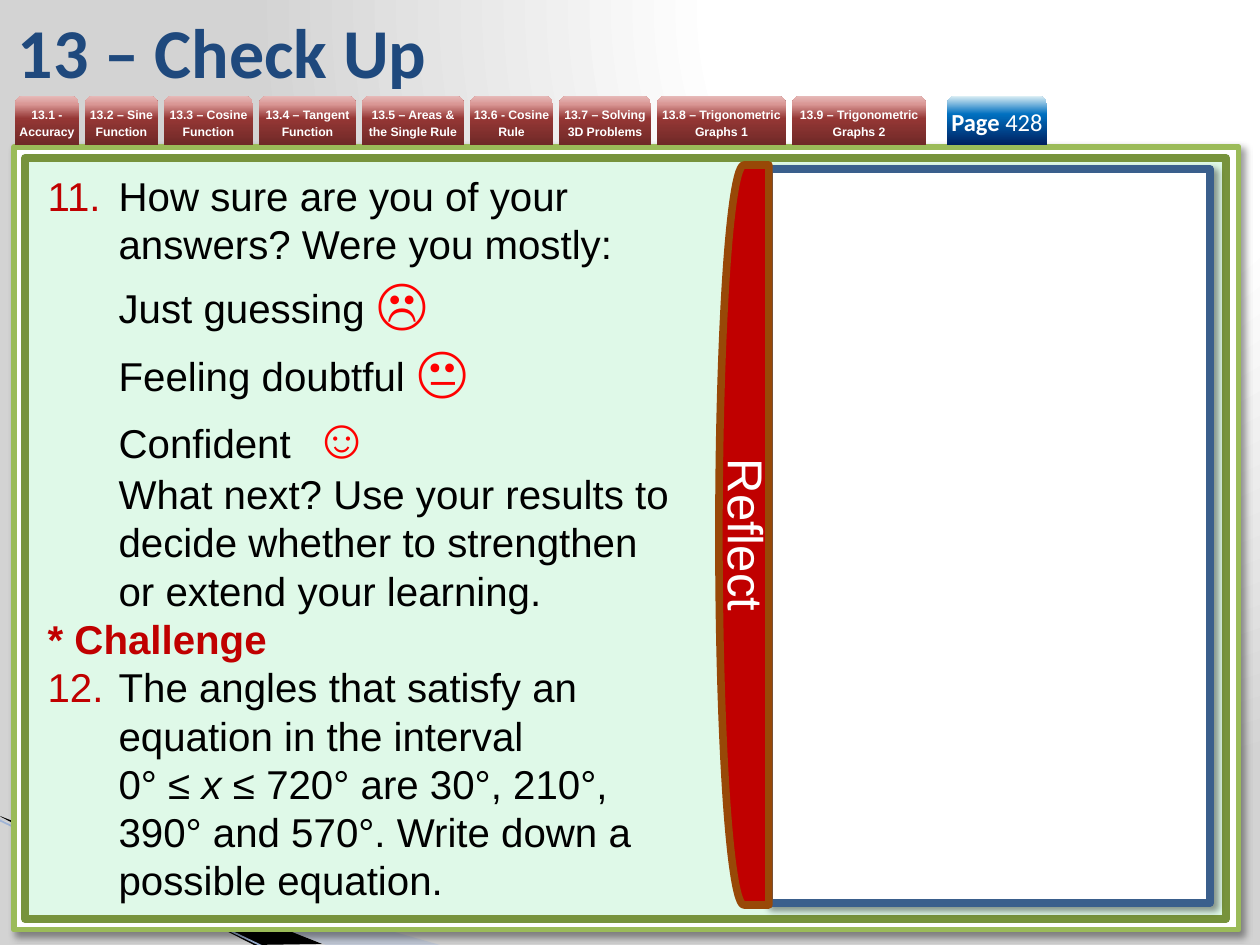
import pptx
import pptx.util
import pptx.oxml
import pptx.oxml.ns
import pptx.dml.color
import pptx.enum.shapes
import pptx.enum.text
from lxml import etree

SCALE = 914400 / 126  # EMU per px
COLORS = {
    "white": "FFFFFF", "black": "000000", "grey": "D3D3D3", "title": "1F497D",
    "red": "C00000", "face": "FF0000", "swoosh": "A7B9DB", "swoosh line": "9EB3D6",
    "frame": "9BBB59", "mint": "DFF9E8", "olive": "77933C", "blue": "3A5F8C",
    "brown": "984807",
}
TAB_STOPS = [(0, "6F2927"), (54, "953735"), (83, "D99694"), (100, "E6B9B8")]
PAGE_STOPS = [(0, "002060"), (63, "0070C0"), (100, "DBEEF4")]
BOTTOM_TO_TOP = '<a:lin ang="16200000" scaled="0"/>'
NS = pptx.oxml.ns.nsdecls("a")
qn = pptx.oxml.ns.qn
SHAPES = pptx.enum.shapes.MSO_SHAPE
CENTER = pptx.enum.text.PP_ALIGN.CENTER
MIDDLE = pptx.enum.text.MSO_ANCHOR.MIDDLE
Pt = pptx.util.Pt
rgb = pptx.dml.color.RGBColor.from_string


def px(*lengths):
    return [pptx.util.Emu(round(length * SCALE)) for length in lengths]


def set_gradient(fill, element, stops, direction):
    fill.gradient()
    old = element.find(".//" + qn("a:gradFill"))
    gs = "".join(f'<a:gs pos="{pos * 1000}"><a:srgbClr val="{color}"/></a:gs>'
                 for pos, color in stops)
    old.getparent().replace(old, pptx.oxml.parse_xml(
        f'<a:gradFill {NS} rotWithShape="1"><a:gsLst>{gs}</a:gsLst>{direction}</a:gradFill>'))


prs = pptx.Presentation()
prs.slide_width, prs.slide_height = px(1260, 945)
slide = prs.slides.add_slide(prs.slide_layouts[1])
shapes = slide.shapes

# Background
set_gradient(slide.background.fill, slide.element,
             [(0, COLORS["white"]), (40, COLORS["white"]), (100, COLORS["grey"])],
             '<a:path path="circle"><a:fillToRect l="65000" t="0" r="0" b="98000"/></a:path>')

# Swooshes in the bottom left corner
for color, alpha, (start, *rest) in [
    ("swoosh", 40, [(-1, 819), (440, 945), (326, 945), (-1, 818)]),
    ("black", 100, [(0, 816), (322, 944), (254, 945), (1, 817)]),
]:
    builder = shapes.build_freeform(*start, scale=SCALE)
    builder.add_line_segments(rest, close=True)
    swoosh = builder.convert_to_shape()
    swoosh.shadow.inherit = False
    swoosh.fill.solid()
    swoosh.fill.fore_color.rgb = rgb(COLORS[color])
    swoosh.line.fill.background()
    if alpha < 100:
        fill_color = swoosh.element.spPr.find(".//" + qn("a:srgbClr"))
        etree.SubElement(fill_color, qn("a:alpha")).set("val", str(alpha * 1000))

swoosh_edge = shapes.add_connector(
    pptx.enum.shapes.MSO_CONNECTOR.STRAIGHT, *px(-1, 820, 264, 947))
swoosh_edge.line.color.rgb = rgb(COLORS["swoosh line"])
swoosh_edge.line.width = Pt(0.95)
etree.SubElement(swoosh_edge.element.spPr, qn("a:effectLst"))

# Frame, question panel, answer panel and the Reflect band
for kind, box, fill, edge, width, shadowed in [
    (SHAPES.RECTANGLE, (14, 147, 1225, 783), "white", "frame", 3, True),
    (SHAPES.RECTANGLE, (25, 158, 1201, 761), "mint", "olive", 4.33, False),
    (SHAPES.RECTANGLE, (769, 169, 441, 734), "white", "blue", 4.33, True),
    (SHAPES.FLOWCHART_DELAY, (719, 165, 50, 740), "red", "brown", 4.33, False),
]:
    panel = shapes.add_shape(kind, *px(*box))
    panel.fill.solid()
    panel.fill.fore_color.rgb = rgb(COLORS[fill])
    panel.line.color.rgb = rgb(COLORS[edge])
    panel.line.width = Pt(width)
    panel.shadow.inherit = False
    if shadowed:
        panel.element.spPr.find(qn("a:effectLst")).append(pptx.oxml.parse_xml(
            f'<a:outerShdw {NS} blurRad="50800" dist="38100" dir="2700000" algn="tl" '
            'rotWithShape="0"><a:srgbClr val="000000"><a:alpha val="40000"/></a:srgbClr>'
            '</a:outerShdw>'))

reflect = panel
reflect.element.spPr.find(qn("a:xfrm")).set("flipH", "1")
reflect.text_frame.text = "Reflect"
reflect.text_frame.vertical_anchor = MIDDLE
reflect.text_frame._txBody.bodyPr.set("vert", "vert")
reflect_label = reflect.text_frame.paragraphs[0]
reflect_label.alignment = CENTER
reflect_label.runs[0].font.size = Pt(28)
reflect_label.runs[0].font.name = "Arial"
reflect_label.runs[0].font.color.rgb = rgb(COLORS["white"])

# Section tabs and page tab: left, width, runs
section_tabs = [
    (15, 64, ["13.1 - Accuracy"]),
    (85, 73, ["13.2 – Sine Function"]),
    (164, 89, ["13.3 – Cosine Function"]),
    (259, 97, ["13.4 – Tangent Function"]),
    (362, 102, ["13.5 – Areas & the Single Rule"]),
    (470, 83, ["13.6 - Cosine Rule"]),
    (559, 92, ["13.7 – Solving 3D Problems"]),
    (657, 129, ["13.8 – Trigonometric Graphs 1"]),
    (792, 134, ["13.9 – Trigonometric Graphs 2"]),
    (947, 100, ["Page ", "428"]),
]
for left, width, labels in section_tabs:
    is_page = len(labels) == 2
    tab = shapes.add_shape(SHAPES.ROUND_2_SAME_RECTANGLE, *px(left, 96, width, 49))
    tab.shadow.inherit = False
    tab.line.fill.background()
    set_gradient(tab.fill, tab.element.spPr, PAGE_STOPS if is_page else TAB_STOPS,
                 BOTTOM_TO_TOP)
    frame = tab.text_frame
    frame.margin_left = frame.margin_right = frame.margin_top = frame.margin_bottom = 0
    frame.vertical_anchor = MIDDLE
    paragraph = frame.paragraphs[0]
    paragraph.alignment = CENTER
    if not is_page:
        paragraph.line_spacing = Pt(10)
    for label in labels:
        run = paragraph.add_run()
        run.text = label
        run.font.size = Pt(14 if is_page else 7)
        run.font.name = "Calibri" if is_page else "Arial"
        run.font.bold = label != "428"
        run.font.color.rgb = rgb(COLORS["white"])

# Title
title = shapes.title
title.left, title.top, title.width, title.height = px(5, 6, 1042, 90)
title.text_frame.text = "13 – Check Up"
title.text_frame.vertical_anchor = MIDDLE
title.text_frame.paragraphs[0].alignment = pptx.enum.text.PP_ALIGN.LEFT
title_font = title.text_frame.paragraphs[0].runs[0].font
title_font.size, title_font.name, title_font.bold = Pt(40), "Calibri", True
title_font.color.rgb = rgb(COLORS["title"])

# Questions: number, then runs of text and style; a newline is a line break
questions_text = [
    (11, [("How sure are you of your answers? Were you mostly:\nJust guessing ", ""),
          ("☹\n", "face"), ("Feeling doubtful ", ""), ("😐\n", "face"),
          ("Confident  ", ""), ("☺\n", "face"),
          ("What next? Use your results to decide whether to strengthen \n"
           "or extend your learning.", "")]),
    (None, [("* Challenge", "heading")]),
    (12, [("The angles that satisfy an \nequation in the interval \n0° ≤ ", ""),
          ("x", "italic"),
          (" ≤ 720° are 30°, 210°, \n390° and 570°. Write down a possible equation.", "")]),
]
run_colors = {"face": "face", "heading": "red"}
questions = slide.placeholders[1]
questions.left, questions.top, questions.width, questions.height = px(35, 165, 722, 752)
frame = questions.text_frame
frame.auto_size = pptx.enum.text.MSO_AUTO_SIZE.SHAPE_TO_FIT_TEXT
frame._txBody.find(qn("a:lstStyle")).append(pptx.oxml.parse_xml(
    f'<a:lvl1pPr {NS} marL="0" indent="0">'
    '<a:spcBef><a:spcPts val="0"/></a:spcBef><a:buNone/>'
    '<a:defRPr sz="2300"><a:latin typeface="Arial"/></a:defRPr></a:lvl1pPr>'))
for index, (number, pieces) in enumerate(questions_text):
    paragraph = frame.add_paragraph() if index else frame.paragraphs[0]
    if number:
        props = paragraph._p.get_or_add_pPr()
        indent = px(71)[0]
        props.set("marL", str(indent))
        props.set("indent", str(-indent))
        bullet_color = etree.SubElement(props, qn("a:buClr"))
        etree.SubElement(bullet_color, qn("a:srgbClr")).set("val", COLORS["red"])
        etree.SubElement(props, qn("a:buFont")).set("typeface", "+mj-lt")
        numbering = etree.SubElement(props, qn("a:buAutoNum"))
        numbering.set("type", "arabicPeriod")
        numbering.set("startAt", str(number))
    for text, style in pieces:
        for line_number, line in enumerate(text.split("\n")):
            if line_number:
                paragraph.add_line_break()
            if line:
                run = paragraph.add_run()
                run.text = line
                run.font.size = Pt(32 if style == "face" else 23)
                run.font.name = "Arial"
                run.font.bold = style == "heading"
                run.font.italic = style == "italic"
                run.font.color.rgb = rgb(COLORS[run_colors.get(style, "black")])

# Bring title, questions and the Reflect band to the front
for part in (title, questions, reflect):
    shapes.element.append(part.element)

prs.save("out.pptx")
